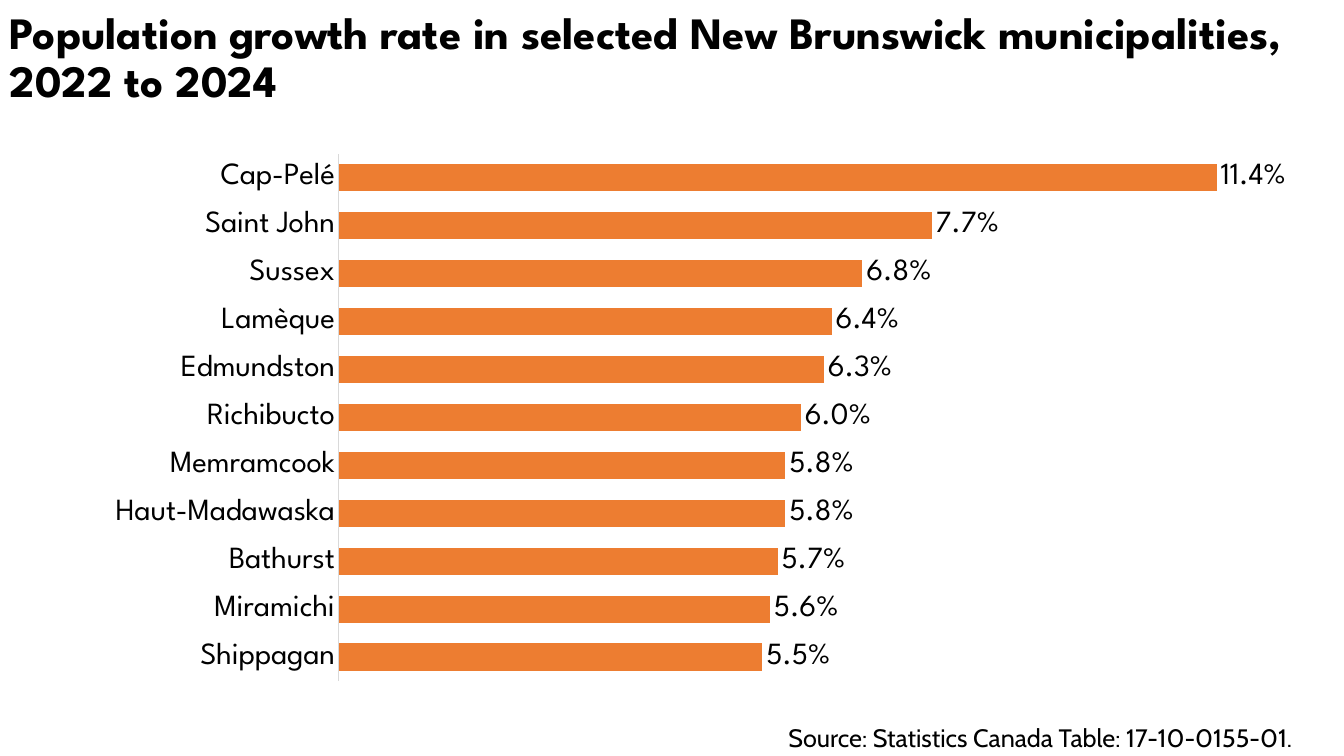
import pptx
import pptx.chart.data
import pptx.dml.color
import pptx.enum.chart
import pptx.enum.text
import pptx.oxml
import pptx.oxml.ns
import pptx.util

Pt = pptx.util.Pt

TITLE = "Population growth rate in selected New Brunswick municipalities, 2022 to 2024"
SOURCE = "Source: Statistics Canada Table: 17-10-0155-01."
# Listed from the bottom bar to the top bar
GROWTH = [
    ("Shippagan", 0.055),
    ("Miramichi", 0.056),
    ("Bathurst", 0.057),
    ("Haut-Madawaska", 0.058),
    ("Memramcook", 0.058),
    ("Richibucto", 0.06),
    ("Edmundston", 0.063),
    ("Lamèque", 0.064),
    ("Sussex", 0.068),
    ("Saint John", 0.077),
    ("Cap-Pelé", 0.114),
]
PERCENT = "0.0%"
PLOT_AREA = {"x": 0.239, "y": 0.028, "w": 0.723, "h": 0.943}

BLACK = pptx.dml.color.RGBColor(0x00, 0x00, 0x00)
ORANGE = pptx.dml.color.RGBColor(0xED, 0x7D, 0x31)
GREY = pptx.dml.color.RGBColor(0xD9, 0xD9, 0xD9)
HEAD_FONT = "League Spartan"
SOURCE_FONT = "Cabin"


def style_font(font, name, size, bold=False):
    font.name = name
    font.size = Pt(size)
    font.bold = bold
    font.color.rgb = BLACK


def add_text(s, box, text, name, size, spacing, bold=False):
    """Add a one-paragraph text box and return its frame and paragraph."""
    tf = s.shapes.add_textbox(*map(Pt, box)).text_frame
    tf.word_wrap = True
    p = tf.paragraphs[0]
    p.line_spacing = spacing
    r = p.add_run()
    r.text = text
    style_font(r.font, name, size, bold)
    return tf, p


def set_plot_layout(chart):
    """Fix the inner plot area as fractions of the chart frame."""
    plot_area = chart._chartSpace.xpath("c:chart/c:plotArea")[0]
    for old in plot_area.xpath("c:layout"):
        plot_area.remove(old)
    sizes = "".join(f'<c:{k} val="{v}"/>' for k, v in PLOT_AREA.items())
    plot_area.insert(0, pptx.oxml.parse_xml(
        f'<c:layout {pptx.oxml.ns.nsdecls("c")}><c:manualLayout>'
        '<c:layoutTarget val="inner"/><c:xMode val="edge"/><c:yMode val="edge"/>'
        f'{sizes}</c:manualLayout></c:layout>'))


def add_growth_chart(s):
    data = pptx.chart.data.CategoryChartData(number_format=PERCENT)
    data.categories = [town for town, _ in GROWTH]
    data.add_series("Series 1", [rate for _, rate in GROWTH])
    chart = s.shapes.add_chart(
        pptx.enum.chart.XL_CHART_TYPE.BAR_CLUSTERED,
        Pt(23.8), Pt(98.6), Pt(913), Pt(399.6), data).chart
    chart.has_legend = False
    chart.has_title = False
    style_font(chart.font, HEAD_FONT, 22)
    set_plot_layout(chart)

    towns = chart.category_axis
    towns.major_tick_mark = pptx.enum.chart.XL_TICK_MARK.NONE
    towns.minor_tick_mark = pptx.enum.chart.XL_TICK_MARK.NONE
    towns.format.line.color.rgb = GREY
    towns.format.line.width = Pt(0.75)
    style_font(towns.tick_labels.font, HEAD_FONT, 22)

    rates = chart.value_axis
    rates.minimum_scale = 0
    rates.maximum_scale = 0.12
    rates.has_major_gridlines = False
    rates.tick_labels.number_format = PERCENT
    rates.tick_labels.number_format_is_linked = False
    rates.visible = False

    plot = chart.plots[0]
    plot.gap_width = 75
    plot.vary_by_categories = False
    bars = plot.series[0]
    bars.format.fill.solid()
    bars.format.fill.fore_color.rgb = ORANGE
    labels = bars.data_labels
    labels.show_value = True
    labels.number_format = PERCENT
    labels.number_format_is_linked = False
    labels.position = pptx.enum.chart.XL_LABEL_POSITION.OUTSIDE_END
    style_font(labels.font, HEAD_FONT, 22)


def main():
    prs = pptx.Presentation()
    prs.slide_width, prs.slide_height = Pt(960), Pt(540)
    s = prs.slides.add_slide(prs.slide_layouts[6])

    tf, _ = add_text(s, (0, -3.6, 950.4, 91.4), TITLE, HEAD_FONT, 32, 0.9, bold=True)
    tf.vertical_anchor = pptx.enum.text.MSO_ANCHOR.MIDDLE

    add_growth_chart(s)

    tf, p = add_text(s, (270.7, 510.5, 659.5, 30.2), SOURCE, SOURCE_FONT, 18, 1.1)
    tf.auto_size = pptx.enum.text.MSO_AUTO_SIZE.SHAPE_TO_FIT_TEXT
    p.alignment = pptx.enum.text.PP_ALIGN.RIGHT
    p.space_after = Pt(8)

    prs.save("out.pptx")


if __name__ == "__main__":
    main()
